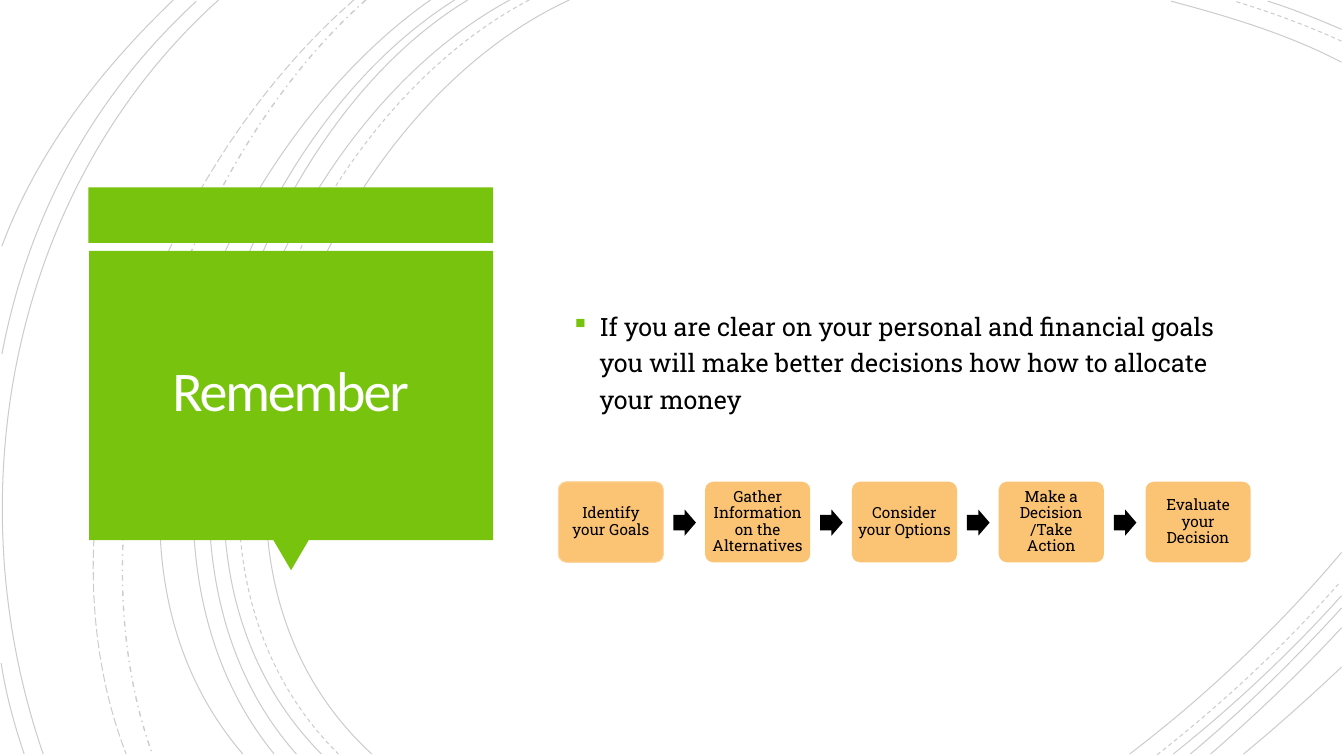
from dataclasses import dataclass

from lxml import etree
from pptx import Presentation
from pptx.dml.color import RGBColor
from pptx.enum.dml import MSO_LINE
from pptx.enum.shapes import MSO_SHAPE
from pptx.enum.text import MSO_ANCHOR, PP_ALIGN
from pptx.oxml.ns import qn
from pptx.util import Cm, Pt

SOLID, DASH = MSO_LINE.SOLID, MSO_LINE.DASH
DASH_DOT, LONG_DASH = MSO_LINE.DASH_DOT, MSO_LINE.LONG_DASH
RECTANGLE, TRIANGLE = MSO_SHAPE.RECTANGLE, MSO_SHAPE.ISOSCELES_TRIANGLE
ROUNDED, ARROW = MSO_SHAPE.ROUNDED_RECTANGLE, MSO_SHAPE.RIGHT_ARROW
MIDDLE = MSO_ANCHOR.MIDDLE
LEFT, CENTER = PP_ALIGN.LEFT, PP_ALIGN.CENTER


@dataclass(frozen=True)
class Theme:
    green: RGBColor = RGBColor(0x78, 0xC3, 0x0D)
    orange: RGBColor = RGBColor(0xFB, 0xC4, 0x75)
    pale_orange: RGBColor = RGBColor(0xFC, 0xD7, 0xA3)
    black: RGBColor = RGBColor(0, 0, 0)
    white: RGBColor = RGBColor(0xFF, 0xFE, 0xFF)
    heading_font: str = "Calibri"
    body_font: str = "Roboto Slab"
    bullet_font: str = "Wingdings"
    title_size: int = 40
    body_size: int = 18
    step_size: int = 11
    thin: float = 0.75
    arc_opacity: int = 20


THEME = Theme()

ARCS = [
    (SOLID, (14.35, 0), (8, 2.92), (3.63, 13.72), (9.37, 19)),
    (SOLID, (33.81, 1.57), (32.46, 0.86), (30.94, 0.41), (29.51, 0.03)),
    (SOLID, (28.47, 19), (30.4, 17.53), (32.23, 15.8), (33.81, 13.92)),
    (DASH, (13.34, 0), (7.24, 3.18), (3.12, 13.64), (8.53, 19)),
    (DASH, (33.81, 1.04), (32.94, 0.64), (32, 0.3), (31.12, 0.03)),
    (DASH, (29.16, 19.02), (30.81, 17.73), (32.39, 16.26), (33.78, 14.66)),
    (SOLID, (12.85, 0), (6.86, 3.23), (2.79, 13.64), (8.1, 19)),
    (SOLID, (33.81, 0.74), (33.2, 0.48), (32.59, 0.23), (31.95, 0.03)),
    (SOLID, (29.57, 19), (31.06, 17.81), (32.51, 16.46), (33.81, 15.01)),
    (SOLID, (11.79, 0), (6.2, 3.38), (2.79, 13.74), (7.47, 19)),
    (SOLID, (30, 19), (31.34, 17.88), (32.61, 16.64), (33.81, 15.32)),
    (SOLID, (11.46, 0), (5.87, 3.51), (2.46, 13.54), (6.91, 19)),
    (SOLID, (30.51, 19), (31.65, 18.01), (32.77, 16.94), (33.81, 15.82)),
    (SOLID, (10.85, 0), (5.51, 3.73), (1.35, 13.44), (6.12, 19)),
    (SOLID, (31.34, 19), (32.18, 18.31), (32.99, 17.58), (33.81, 16.81)),
    (DASH_DOT, (9.22, 0), (4.47, 4.22), (1.65, 12.93), (3.84, 19)),
    (LONG_DASH, (8.92, 0), (3.99, 4.29), (0.74, 12.67), (3.18, 19)),
    (SOLID, (5.51, 0), (0.28, 4.7), (-1.17, 12.45), (1.09, 19)),
    (SOLID, (4.95, 0.03), (2.34, 2.44), (0.71, 5.44), (0.05, 8.92)),
    (SOLID, (0.03, 16.71), (0.15, 17.5), (0.36, 18.26), (0.61, 19)),
    (SOLID, (4.37, 0), (2.54, 1.75), (0.94, 3.81), (0.05, 6.2)),
]

STEPS = [
    "Identify your Goals",
    "Gather Information on the Alternatives",
    "Consider your Options",
    "Make a Decision /Take Action",
    "Evaluate your Decision",
]
STEP_LEFT, STEP_PITCH = 14.07, 3.7


def bend_segments(shape):
    outline = shape._element.find(".//" + qn("a:path"))
    curve = etree.SubElement(outline, qn("a:cubicBezTo"))
    for segment in outline.findall(qn("a:lnTo")):
        curve.append(segment[0])
        outline.remove(segment)


def add_arc(slide, dash, *controls):
    points = [(Cm(x), Cm(y)) for x, y in controls]
    builder = slide.shapes.build_freeform(*points[0])
    builder.add_line_segments(points[1:], close=False)
    shape = builder.convert_to_shape()
    bend_segments(shape)
    shape.shadow.inherit = False
    shape.fill.background()
    shape.line.color.rgb = THEME.black
    shape.line.width = Pt(1 if dash == DASH_DOT else THEME.thin)
    shape.line.dash_style = dash
    color = shape._element.find(".//" + qn("a:ln")).find(".//" + qn("a:srgbClr"))
    etree.SubElement(color, qn("a:alpha"), val=str(THEME.arc_opacity * 1000))


def add_block(slide, kind, left, top, width, height, fill):
    shape = slide.shapes.add_shape(kind, Cm(left), Cm(top), Cm(width), Cm(height))
    shape.shadow.inherit = False
    shape.fill.solid()
    shape.fill.fore_color.rgb = fill
    shape.line.fill.background()
    return shape


def set_text(shape, text, font, size, color, alignment, line_spacing, inset=None):
    frame = shape.text_frame
    frame.word_wrap = True
    frame.vertical_anchor = MIDDLE
    if inset is not None:
        frame.margin_left = frame.margin_right = Cm(inset)
        frame.margin_top = frame.margin_bottom = Cm(inset)
    frame.text = text
    paragraph = frame.paragraphs[0]
    paragraph.alignment = alignment
    paragraph.line_spacing = line_spacing
    run = paragraph.runs[0]
    run.font.name = font
    run.font.size = Pt(size)
    run.font.color.rgb = color
    return paragraph


def add_bullet(paragraph):
    properties = paragraph._p.get_or_add_pPr()
    properties.set("marL", str(Cm(0.64)))
    properties.set("indent", str(-Cm(0.64)))
    color = etree.SubElement(properties, qn("a:buClr"))
    etree.SubElement(color, qn("a:srgbClr"), val=str(THEME.green))
    etree.SubElement(properties, qn("a:buSzPct"), val="110000")
    etree.SubElement(properties, qn("a:buFont"), typeface=THEME.bullet_font)
    etree.SubElement(properties, qn("a:buChar"), char="§")


def add_title_panel(slide):
    add_block(slide, RECTANGLE, 2.23, 4.72, 10.2, 1.4, THEME.green)
    pointer = add_block(slide, TRIANGLE, 6.89, 13.61, 0.89, 0.76, THEME.green)
    pointer.rotation = 180
    add_block(slide, RECTANGLE, 2.25, 6.32, 10.18, 7.29, THEME.green)
    title = slide.shapes.add_textbox(Cm(2.46), Cm(6.53), Cm(9.73), Cm(6.83))
    paragraph = set_text(title, "Remember", THEME.heading_font, THEME.title_size,
                         THEME.white, CENTER, 0.85, 0.64)
    paragraph.runs[0].font._element.set("spc", "-150")


def add_message(slide):
    message = slide.shapes.add_textbox(Cm(14.22), Cm(2.24), Cm(17.45), Cm(13.65))
    paragraph = set_text(
        message,
        "If you are clear on your personal and financial goals you will make "
        "better decisions how how to allocate your money",
        THEME.body_font, THEME.body_size, THEME.black, LEFT, 1.2,
    )
    paragraph.space_before = Pt(10)
    add_bullet(paragraph)


def add_process(slide):
    for index, text in enumerate(STEPS):
        left = STEP_LEFT + index * STEP_PITCH
        step = add_block(slide, ROUNDED, left, 12.14, 2.65, 2.03, THEME.orange)
        step.adjustments[0] = 0.1
        set_text(step, text, THEME.body_font, THEME.step_size, THEME.black, CENTER, 0.9, 0.08)
        if index == 0:
            step.line.color.rgb = THEME.pale_orange
            step.line.width = Pt(THEME.thin)
        if index < len(STEPS) - 1:
            arrow = add_block(slide, ARROW, left + 2.9, 12.84, 0.57, 0.66, THEME.black)
            arrow.adjustments[0] = 0.6
            arrow.adjustments[1] = 0.5


def main():
    presentation = Presentation()
    presentation.slide_width = Cm(33.87)
    presentation.slide_height = Cm(19.05)
    slide = presentation.slides.add_slide(presentation.slide_layouts[6])
    for arc in ARCS:
        add_arc(slide, *arc)
    add_title_panel(slide)
    add_message(slide)
    add_process(slide)
    presentation.save("out.pptx")


if __name__ == "__main__":
    main()
